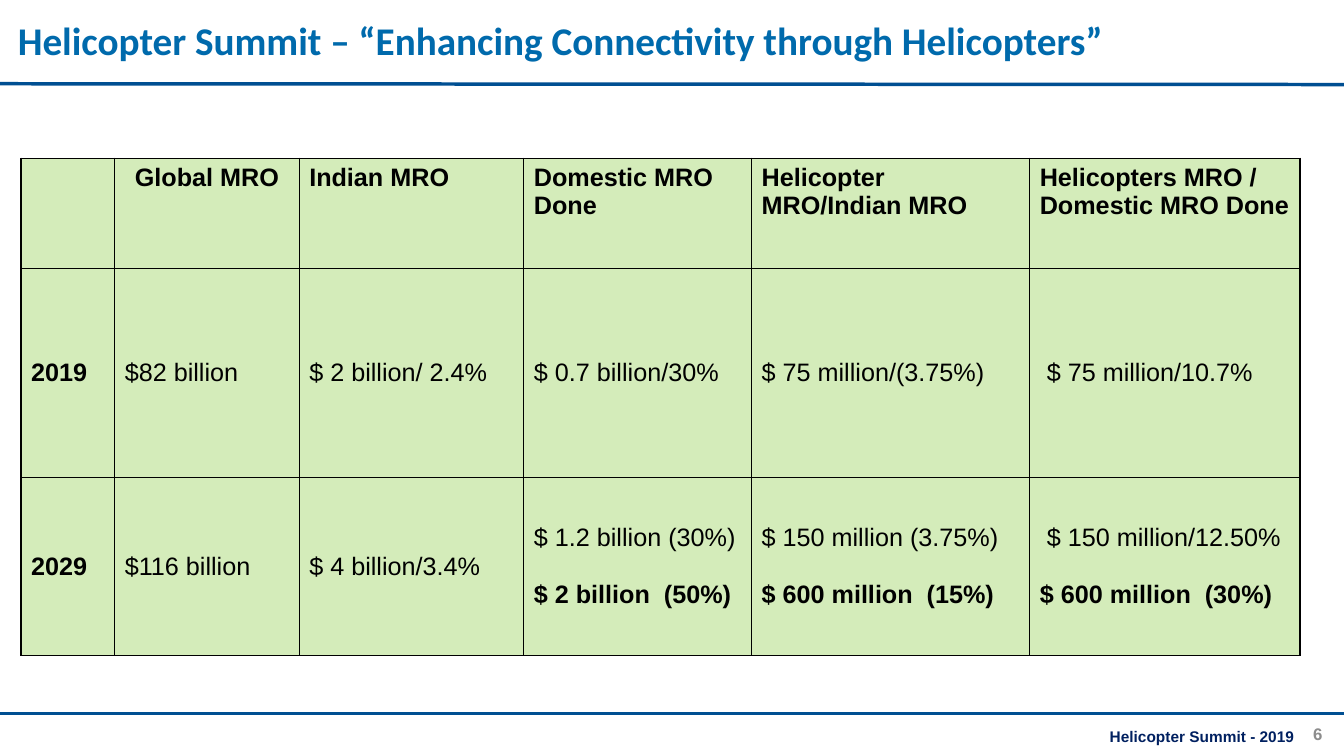
"""Build the helicopter MRO market slide."""
from dataclasses import dataclass

from lxml import etree
from pptx import Presentation
from pptx import util as u
from pptx.dml.color import RGBColor
from pptx.enum import shapes, text
from pptx.oxml import parse_xml
from pptx.oxml.ns import nsdecls, qn

COLOURS = {
    "title": "006AAC",
    "rule": "004F92",
    "footer": "002060",
    "number": "8C8C8C",
    "cell": "D4ECBA",
    "ink": "000000",
    "paper": "FFFFFF",
}
COLUMN_WIDTHS = (2.36, 4.65, 5.66, 5.74, 7.01, 6.81)
ROW_HEIGHTS = (2.77, 5.28, 4.47)
MARKET = (
    ("", "Global MRO", "Indian MRO", "Domestic MRO Done",
     "Helicopter MRO/Indian MRO", "Helicopters MRO / Domestic MRO Done"),
    ("2019", "$82 billion", "$ 2 billion/ 2.4%", "$ 0.7 billion/30%",
     "$ 75 million/(3.75%)", " $ 75 million/10.7%"),
    ("2029", "$116 billion", "$ 4 billion/3.4%",
     "$ 1.2 billion (30%)\n$ 2 billion  (50%)",
     "$ 150 million (3.75%)\n$ 600 million  (15%)",
     " $ 150 million/12.50%\n$ 600 million  (30%)"),
)


@dataclass(frozen=True)
class Rule:
    """A full-width line, given by its heights at both ends in cm."""

    start_y: float
    end_y: float


@dataclass(frozen=True)
class Style:
    """The look of a paragraph."""

    size: float
    colour: str
    bold: bool = True
    face: str = "Arial"
    align: text.PP_ALIGN = text.PP_ALIGN.LEFT


RULES = (Rule(17.98, 17.98), Rule(2.11, 2.13))


def rgb(name: str) -> RGBColor:
    """Return a named colour."""
    return RGBColor.from_string(COLOURS[name])


def format_paragraph(paragraph, style: Style) -> None:
    """Apply a style to a paragraph."""
    paragraph.alignment = style.align
    paragraph.font.name = style.face
    paragraph.font.size = u.Pt(style.size)
    paragraph.font.bold = style.bold
    paragraph.font.color.rgb = rgb(style.colour)


def add_title(slide) -> None:
    """Fill and place the title placeholder."""
    heading = slide.shapes.title
    heading.left, heading.top = u.Cm(-1.07), u.Cm(-0.05)
    heading.width, heading.height = u.Cm(30.81), u.Cm(2.13)
    frame = heading.text_frame
    frame.text = "Helicopter Summit – “Enhancing Connectivity through Helicopters”"
    frame.margin_left = u.Cm(1.52)
    frame.vertical_anchor = text.MSO_ANCHOR.MIDDLE
    format_paragraph(frame.paragraphs[0], Style(28, "title", face="Calibri"))


def add_rule(slide, rule: Rule, width: int) -> None:
    """Draw a line across the slide."""
    line = slide.shapes.add_connector(
        shapes.MSO_CONNECTOR.STRAIGHT, 0, u.Cm(rule.start_y), width, u.Cm(rule.end_y))
    line.line.color.rgb = rgb("rule")
    line.line.width = u.Pt(2.5)
    etree.SubElement(line._element.spPr, qn("a:effectLst"))


def add_footer(slide) -> None:
    """Add the event name and the page number."""
    page = slide.shapes.add_textbox(u.Cm(25.68), u.Cm(17.98), u.Cm(7.9), u.Cm(1.02))
    page.text_frame.word_wrap = True
    page.text_frame.vertical_anchor = text.MSO_ANCHOR.MIDDLE
    event = slide.shapes.add_shape(
        shapes.MSO_SHAPE.RECTANGLE, u.Cm(0.13), u.Cm(18.21), u.Cm(32.74), u.Cm(0.74))
    event.shadow.inherit = False
    event.fill.solid()
    event.fill.fore_color.rgb = rgb("paper")
    event.line.color.rgb = rgb("paper")
    event.line.width = u.Pt(1)
    event.text_frame.vertical_anchor = text.MSO_ANCHOR.TOP
    for box, words, size, colour in (
            (page, "6", 12, "number"),
            (event, "Helicopter Summit - 2019", 11, "footer")):
        box.text_frame.text = words
        format_paragraph(box.text_frame.paragraphs[0],
                         Style(size, colour, align=text.PP_ALIGN.RIGHT))


def add_borders(cell) -> None:
    """Outline a cell on all four sides."""
    properties = cell._tc.get_or_add_tcPr()
    for side in ("lnL", "lnR", "lnT", "lnB"):
        properties.append(parse_xml(
            f'<a:{side} {nsdecls("a")} w="{u.Pt(1)}"><a:solidFill>'
            f'<a:srgbClr val="{COLOURS["ink"]}"/></a:solidFill></a:{side}>'))


def fill_cell(cell, words: str, row: int, column: int) -> None:
    """Write and format one table cell."""
    add_borders(cell)
    cell.fill.solid()
    cell.fill.fore_color.rgb = rgb("cell")
    cell.text = words
    cell.vertical_anchor = text.MSO_ANCHOR.MIDDLE if row else text.MSO_ANCHOR.TOP
    centred = row == 0 and column == 1
    align = text.PP_ALIGN.CENTER if centred else text.PP_ALIGN.LEFT
    for index, paragraph in enumerate(cell.text_frame.paragraphs):
        bold = row == 0 or column == 0 or index > 0
        if index:
            paragraph.space_before = u.Pt(20.5)
        format_paragraph(paragraph, Style(18, "ink", bold, align=align))


def add_market_table(slide) -> None:
    """Add the MRO market table."""
    market = slide.shapes.add_table(
        len(ROW_HEIGHTS), len(COLUMN_WIDTHS), u.Cm(0.53), u.Cm(3.99),
        u.Cm(sum(COLUMN_WIDTHS)), u.Cm(sum(ROW_HEIGHTS))).table
    market.first_row = market.horz_banding = False
    for column, width in zip(market.columns, COLUMN_WIDTHS):
        column.width = u.Cm(width)
    for row, height in enumerate(ROW_HEIGHTS):
        market.rows[row].height = u.Cm(height)
        for column, words in enumerate(MARKET[row]):
            fill_cell(market.cell(row, column), words, row, column)


def main() -> None:
    """Build and save the slide."""
    deck = Presentation()
    deck.slide_width, deck.slide_height = u.Cm(33.87), u.Cm(19.05)
    slide = deck.slides.add_slide(deck.slide_layouts[5])
    add_title(slide)
    add_footer(slide)
    add_market_table(slide)
    for rule in RULES:
        add_rule(slide, rule, deck.slide_width)
    deck.save("out.pptx")


if __name__ == "__main__":
    main()
